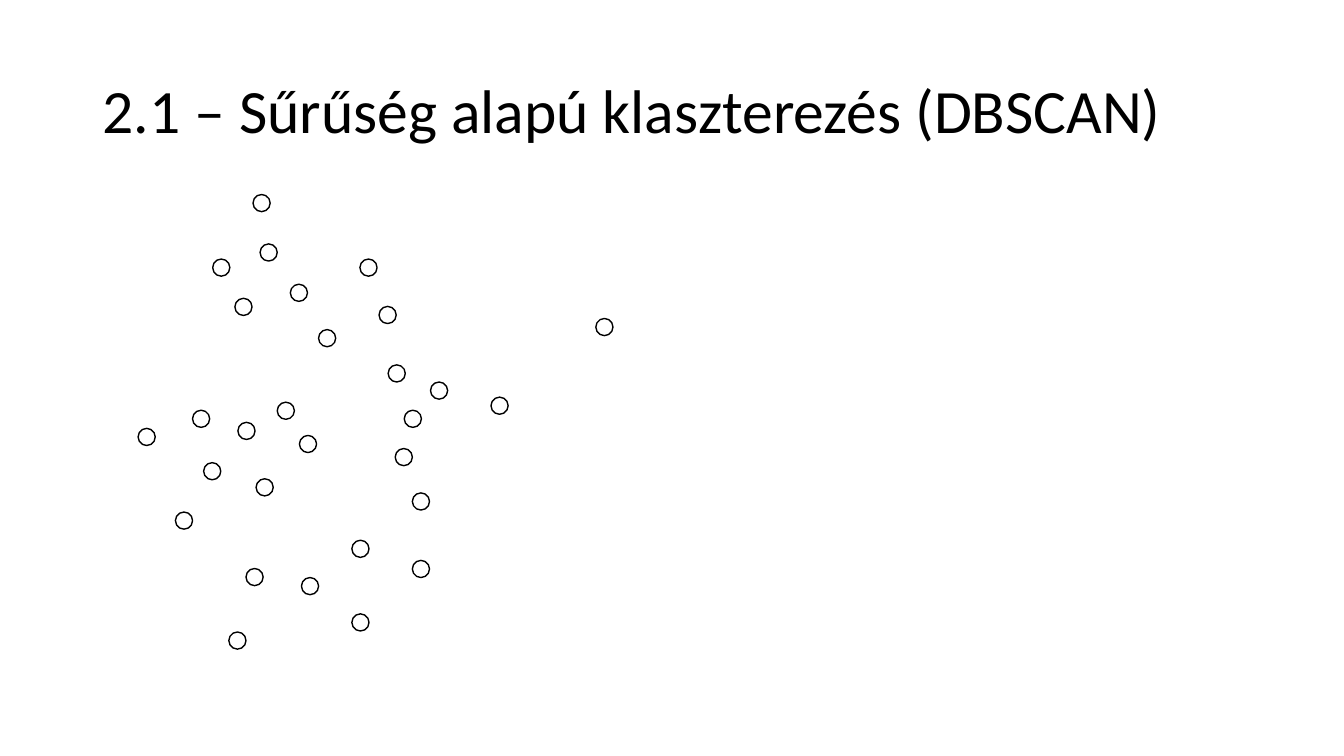
from pptx import Presentation
from pptx.dml.color import RGBColor
from pptx.enum.shapes import MSO_SHAPE as Shape
from pptx.enum.text import MSO_ANCHOR as Anchor
from pptx.util import Emu, Pt

EMU_PER_PX = 9144  # 100 px to the inch
SLIDE_SIZE = (1333, 750)
BLANK_LAYOUT = 6

BLACK = RGBColor(0x00, 0x00, 0x00)

TITLE = "2.1 – Sűrűség alapú klaszterezés (DBSCAN)"
TITLE_FRAME = (92, 40, 1150, 145)
TITLE_FONT = {"name": "Calibri", "size": Pt(44)}

# Left and top of each data point, by group
POINT_SIZE = 17
POINT_GROUPS = {
    "left": [(254, 475), (191, 407), (297, 432), (236, 419), (275, 399),
             (202, 459)],
    "upper": [(211, 257), (233, 296), (258, 242), (288, 282), (316, 327)],
    "right": [(357, 257), (376, 304), (385, 362), (401, 407), (392, 445)],
    "lower": [(299, 573), (244, 564), (349, 609), (349, 536), (409, 489),
              (409, 556)],
    "outer": [(427, 379), (591, 316), (227, 627), (137, 425), (174, 508),
              (487, 394), (251, 193)],
}


def px(*lengths):
    return [Emu(length * EMU_PER_PX) for length in lengths]


def set_values(target, values):
    for name, value in values.items():
        setattr(target, name, value)


def add_title(page, text):
    box = page.shapes.add_textbox(*px(*TITLE_FRAME))
    set_values(box.text_frame,
               {"word_wrap": True, "vertical_anchor": Anchor.MIDDLE})
    para = box.text_frame.paragraphs[0]
    para.line_spacing = 0.9
    span = para.add_run()
    span.text = text
    set_values(span.font, TITLE_FONT)
    span.font.color.rgb = BLACK


def add_point(page, left, top):
    point = page.shapes.add_shape(
        Shape.OVAL, *px(left, top, POINT_SIZE, POINT_SIZE))
    point.shadow.inherit = False
    point.fill.background()
    point.line.color.rgb = BLACK
    point.line.width = Pt(1)


def main():
    deck = Presentation()
    deck.slide_width, deck.slide_height = px(*SLIDE_SIZE)
    page = deck.slides.add_slide(deck.slide_layouts[BLANK_LAYOUT])

    # Heading
    add_title(page, TITLE)

    # Scatter of data points
    for points in POINT_GROUPS.values():
        for left, top in points:
            add_point(page, left, top)

    deck.save("out.pptx")


if __name__ == "__main__":
    main()
